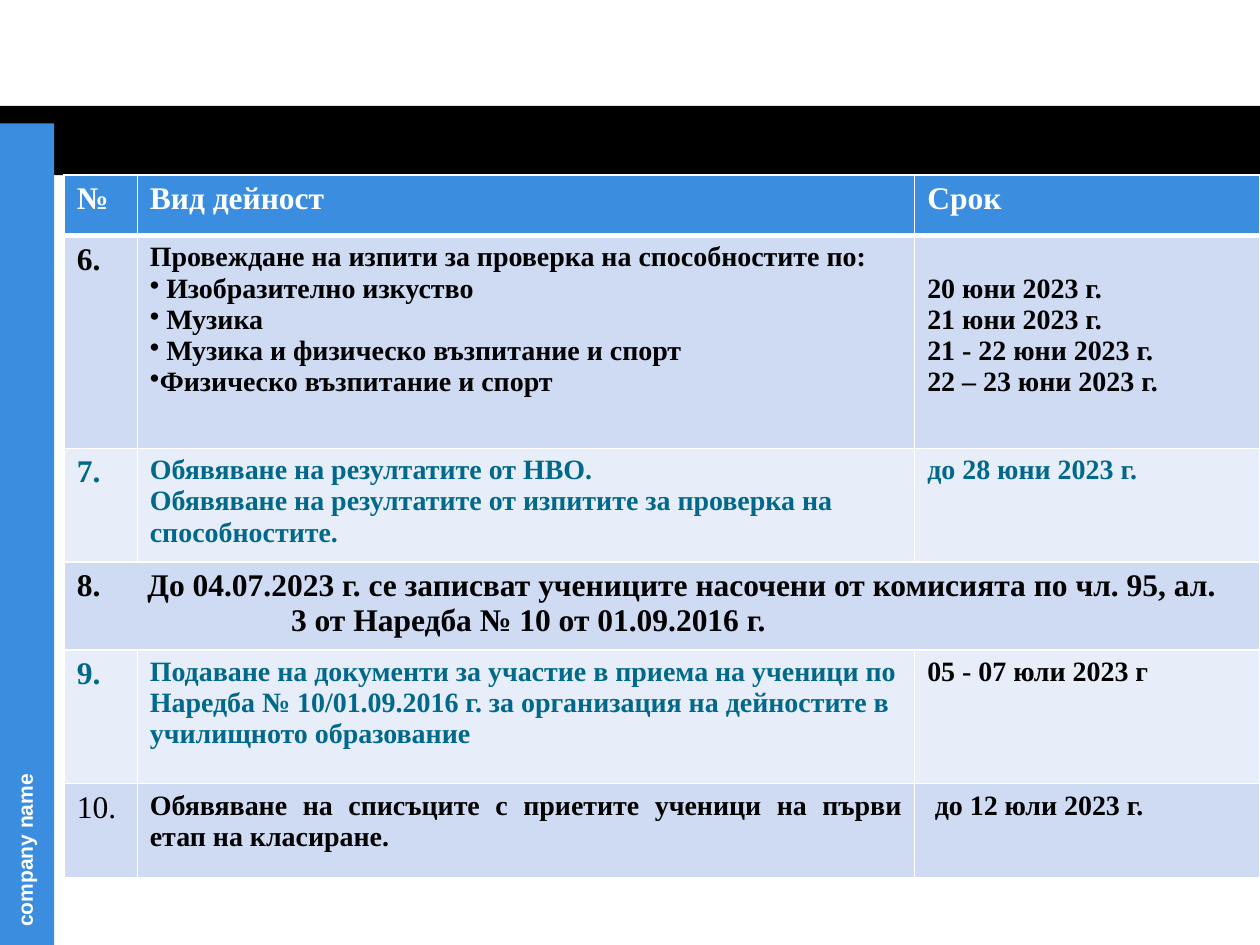
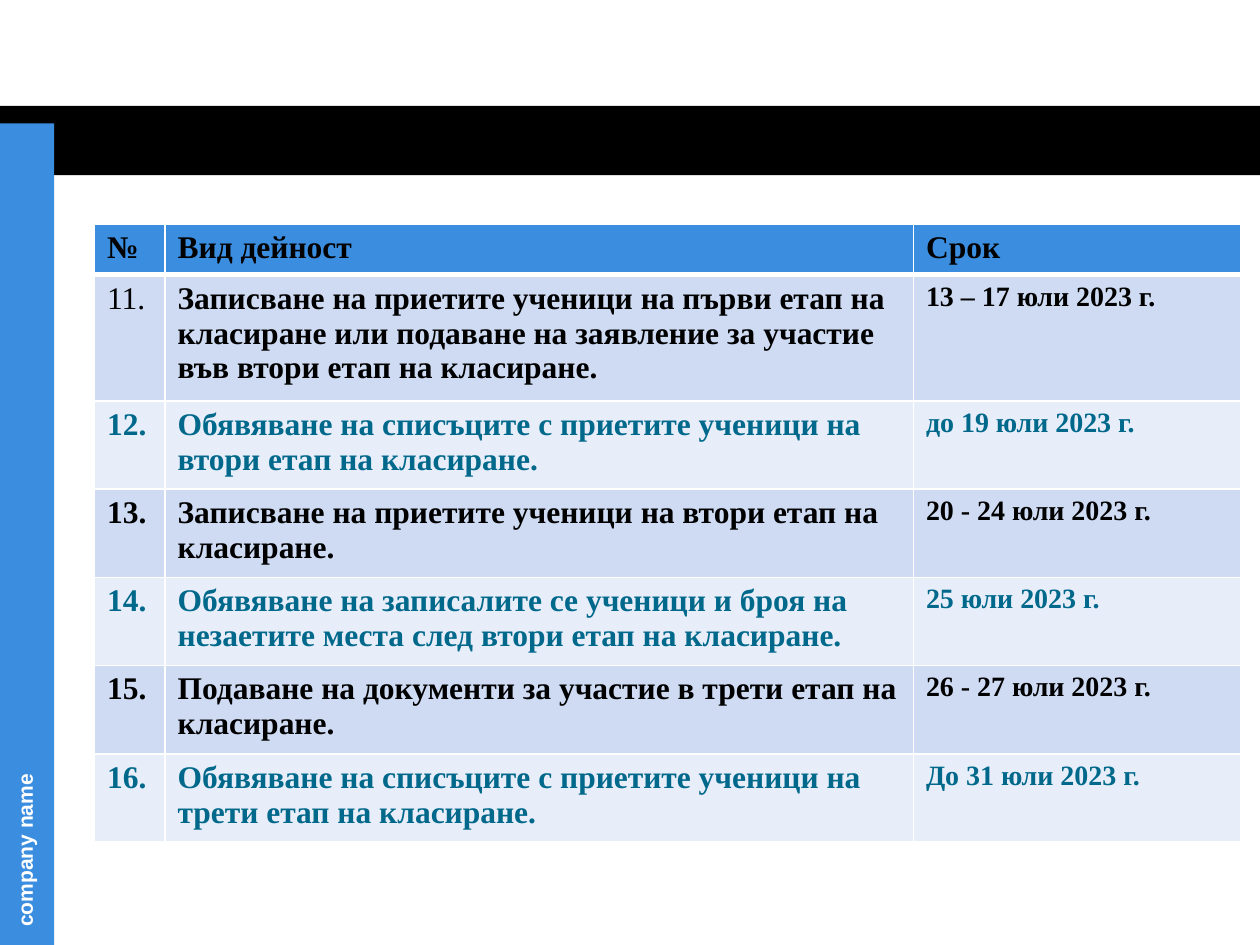
from dataclasses import dataclass

import pptx
import pptx.dml.color
import pptx.enum.shapes
import pptx.enum.text
import pptx.oxml.ns
import pptx.util
from lxml import etree

Inches = pptx.util.Inches
Pt = pptx.util.Pt
qn = pptx.oxml.ns.qn

COLORS = {
    "black": "000000",
    "white": "FFFFFF",
    "blue": "3B8DDF",
    "teal": "00688B",
    "dark band": "CEDBF3",
    "light band": "E8EEF9",
}
HEADINGS = ["№", "Вид дейност", "Срок"]


@dataclass
class Line:
    """One paragraph of a cell; indent in inches."""
    text: str
    indent: float = 0
    bullet: bool = False
    justify: bool = False
    tab: float = 0


class Deck:
    table_font = "Times New Roman"
    label_font = "Arial"

    def __init__(self):
        self.presentation = pptx.Presentation()
        self.presentation.slide_width = Inches(10)
        self.presentation.slide_height = Inches(7.5)
        self.slide = None

    def color(self, name):
        return pptx.dml.color.RGBColor.from_string(COLORS[name])

    def style(self, paragraph, font, size, color, bold=True):
        for run in paragraph.runs:
            run.font.name = font
            run.font.size = Pt(size)
            run.font.bold = bold
            run.font.color.rgb = self.color(color)

    def add_slide(self):
        self.slide = self.presentation.slides.add_slide(
            self.presentation.slide_layouts[6])
        self.band(0, 0.84, 10, 0.55, "black")
        self.band(0, 0.98, 0.43, 6.52, "blue")
        self.side_label("company name")

    def band(self, left, top, width, height, color):
        shape = self.slide.shapes.add_shape(
            pptx.enum.shapes.MSO_SHAPE.RECTANGLE,
            Inches(left), Inches(top), Inches(width), Inches(height))
        shape.shadow.inherit = False
        shape.fill.solid()
        shape.fill.fore_color.rgb = self.color(color)
        shape.line.fill.background()

    def side_label(self, text):
        box = self.slide.shapes.add_textbox(
            Inches(-1.52), Inches(5.59), Inches(3.43), Inches(0.3))
        box.rotation = 270
        box.text_frame.word_wrap = True
        box.text_frame.text = text
        self.style(box.text_frame.paragraphs[0], self.label_font, 12, "white")

    def border(self, cell, side, width):
        properties = cell._tc.get_or_add_tcPr()
        line = etree.SubElement(properties, qn(f"a:ln{side}"), w=str(Pt(width)))
        fill = etree.SubElement(line, qn("a:solidFill"))
        etree.SubElement(fill, qn("a:srgbClr"), val=COLORS["white"])

    def paint_cell(self, cell, row, fill):
        """White borders, with a heavier rule under the header."""
        widths = {"L": 1, "R": 1, "T": 3 if row == 1 else 1, "B": 3 if row == 0 else 1}
        for side, width in widths.items():
            self.border(cell, side, width)
        cell.fill.solid()
        cell.fill.fore_color.rgb = self.color(fill)

    def fill_cell(self, cell, content, size, color, bold=True):
        lines = [Line(content)] if isinstance(content, str) else content
        cell.text_frame.text = "\n".join(line.text for line in lines)
        for paragraph, line in zip(cell.text_frame.paragraphs, lines):
            if line.justify:
                paragraph.alignment = pptx.enum.text.PP_ALIGN.JUSTIFY
            properties = paragraph._p.get_or_add_pPr()
            if line.indent:
                properties.set("marL", str(Inches(line.indent)))
            if line.bullet:
                properties.set("indent", str(-Inches(line.indent)))
                etree.SubElement(properties, qn("a:buChar"), char="•")
            if line.tab:
                tabs = etree.SubElement(properties, qn("a:tabLst"))
                etree.SubElement(tabs, qn("a:tab"), pos=str(Inches(line.tab)), algn="l")
            self.style(paragraph, self.table_font, size, color, bold)

    def schedule(self, left, top, columns, heights, rows, heading_color, activity_size):
        """Header plus rows of number, activity, date; light rows have teal text."""
        table = self.slide.shapes.add_table(
            len(heights), len(columns), Inches(left), Inches(top),
            Inches(sum(columns)), Inches(sum(heights))).table
        for column, width in zip(table.columns, columns):
            column.width = Inches(width)
        for table_row, height in zip(table.rows, heights):
            table_row.height = Inches(height)

        for index, row in enumerate([HEADINGS] + rows):
            light = index > 0 and index % 2 == 0
            fill = "blue" if index == 0 else "light band" if light else "dark band"
            color = heading_color if index == 0 else "teal" if light else "black"
            sizes = [18, 18, 18] if index == 0 else [18, activity_size, 16]
            cells = [table.cell(index, column) for column in range(len(columns))]
            for cell in cells:
                self.paint_cell(cell, index, fill)
            if len(row) == 1:
                cells[0].merge(cells[-1])
            for cell, content, size in zip(cells, row, sizes):
                self.fill_cell(cell, content, size, color,
                               bold=content not in ("10.", "11."))
        return table


def build_exam_slide(deck):
    deck.add_slide()
    rows = [
        ["6.",
         [Line("Провеждане на изпити за проверка на способностите по:", justify=True),
          Line("Изобразително изкуство", 0.13, bullet=True),
          Line("Музика", 0.13, bullet=True),
          Line("Музика и физическо възпитание и спорт", 0.13, bullet=True),
          Line("Физическо възпитание и спорт", 0.08, bullet=True)],
         [Line("20 юни 2023 г."), Line("21 юни 2023 г."),
          Line("21 - 22 юни 2023 г."), Line("22 – 23 юни 2023 г.")]],
        ["7.",
         [Line("Обявяване на резултатите от НВО."),
          Line("Обявяване на резултатите от изпитите за проверка на способностите.")],
         "до 28 юни 2023 г."],
        [[Line("8.\tДо 04.07.2023 г. се записват учениците насочени от комисията "
               "по чл. 95, ал.", tab=0.56),
          Line("3 от Наредба № 10 от 01.09.2016 г.", 1.7)]],
        ["9.",
         "Подаване на документи за участие в приема на ученици по Наредба № "
         "10/01.09.2016 г. за организация на дейностите в училищното образование",
         "05 - 07 юли 2023 г"],
        ["10.",
         [Line("Обявяване на списъците с приетите ученици на първи етап на класиране.",
               justify=True)],
         [Line("до 12 юли 2023 г.", 0.06)]],
    ]
    table = deck.schedule(0.51, 1.39, [0.58, 6.17, 2.74],
                          [0.48, 1.69, 0.9, 0.7, 1.06, 0.75], rows, "white", 16)
    # Exam dates start level with the first bullet
    table.cell(1, 2).margin_top = Inches(0.3)
    # Application dates stand out in black
    deck.style(table.cell(4, 2).text_frame.paragraphs[0], deck.table_font, 16, "black")


def build_enrolment_slide(deck):
    deck.add_slide()
    rows = [
        ["11.", "Записване на приетите ученици на първи етап на класиране или подаване "
         "на заявление за участие във втори етап на класиране.", "13 – 17 юли 2023 г."],
        ["12.", "Обявяване на списъците с приетите ученици на втори етап на класиране.",
         "до 19 юли 2023 г."],
        ["13.", "Записване на приетите ученици на втори етап на класиране.",
         "20 - 24 юли 2023 г."],
        ["14.", "Обявяване на записалите се ученици и броя на незаетите места след "
         "втори етап на класиране.", "25 юли 2023 г."],
        ["15.", "Подаване на документи за участие в трети етап на класиране.",
         "26 - 27 юли 2023 г."],
        ["16.", "Обявяване на списъците с приетите ученици на трети етап на класиране.",
         "До 31 юли 2023 г."],
    ]
    deck.schedule(0.75, 1.78, [0.56, 5.94, 2.6], [0.4, 1] + [0.7] * 5,
                  rows, "black", 18)


def main():
    deck = Deck()
    build_exam_slide(deck)
    build_enrolment_slide(deck)
    deck.presentation.save("out.pptx")


if __name__ == "__main__":
    main()
